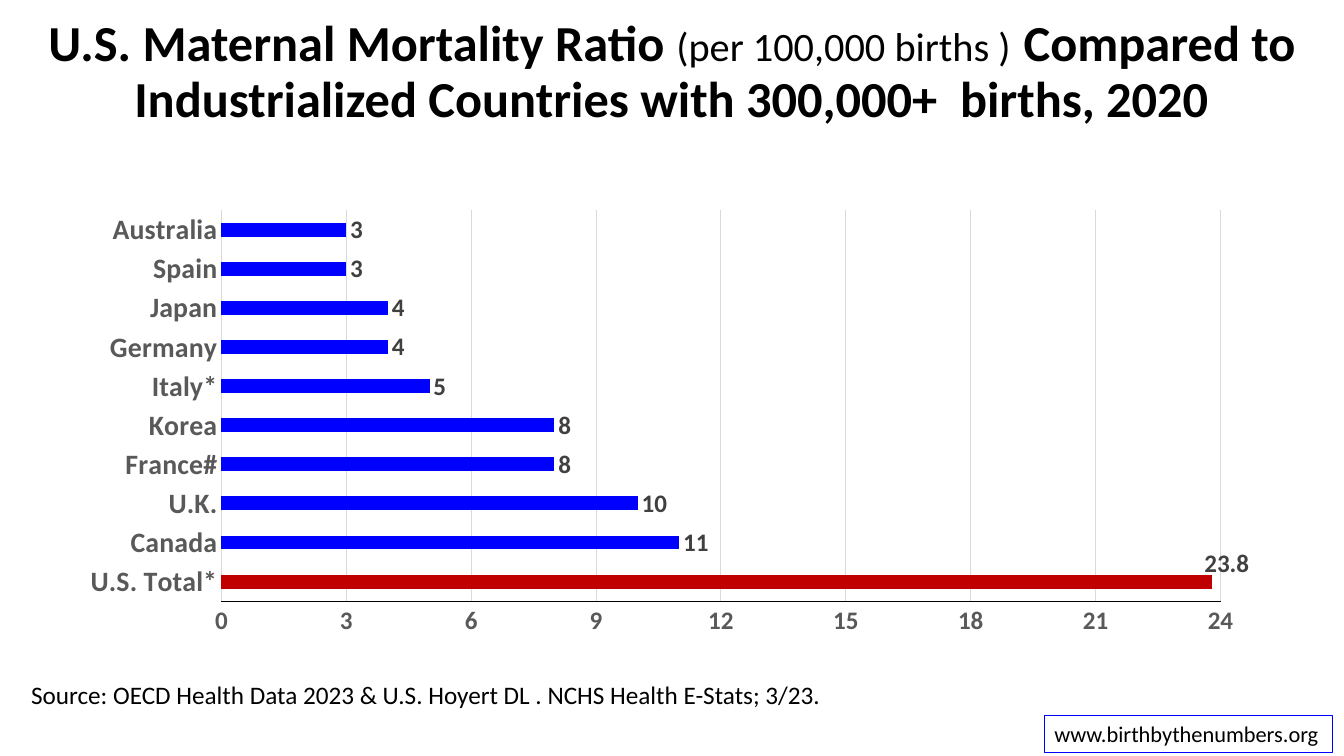
from typing import NamedTuple, Optional

from lxml import etree
from pptx import Presentation
from pptx.chart.data import CategoryChartData
from pptx.dml.color import RGBColor
from pptx.enum import chart as ch, shapes, text
from pptx.util import Inches, Pt

FONT = "Calibri"
BLUE, RED, GRID = "0000FF", "C00000", "D9D9D9"
CHART_NS = "http://schemas.openxmlformats.org/drawingml/2006/chart"


class Run(NamedTuple):
    text: str
    size: float
    bold: bool


class Box(NamedTuple):
    text: str
    left: float
    top: float
    width: float
    height: float
    size: float
    wrap: bool
    fill: Optional[str] = None
    line: Optional[str] = None


TITLE = [
    Run("U.S. Maternal Mortality Ratio ", 36, True),
    Run("(per 100,000 births )", 28.8, False),
    Run(" ", 39.6, True),
    Run("Compared to Industrialized Countries with 300,000+  births, 2020", 36, True),
]
RATIOS = {
    "U.S. Total*": 23.8, "Canada": 11, "U.K.": 10, "France#": 8, "Korea": 8,
    "Italy*": 5, "Germany": 4, "Japan": 4, "Spain": 3, "Australia": 3,
}
BOXES = [
    Box("Source: OECD Health Data 2023 & U.S. Hoyert DL . NCHS Health E-Stats; 3/23.",
        0.21, 6.69, 12.91, 0.4, 18, True),
    Box("www.birthbythenumbers.org", 10.36, 7.1, 2.86, 0.37, 16, False, "FFFFFF", BLUE),
]


def rgb(value: str) -> RGBColor:
    return RGBColor.from_string(value)


def set_font(font, size: float, color: str, bold: bool = False) -> None:
    font.name, font.size, font.bold = FONT, Pt(size), bold
    font.color.rgb = rgb(color)


def set_line(line, color: str) -> None:
    line.color.rgb = rgb(color)
    line.width = Pt(0.75)


def make_layout(**values) -> etree._Element:
    """Build a manual chart layout from its settings, in schema order."""
    layout = etree.Element(f"{{{CHART_NS}}}layout")
    manual = etree.SubElement(layout, f"{{{CHART_NS}}}manualLayout")
    for name, value in values.items():
        etree.SubElement(manual, f"{{{CHART_NS}}}{name}").set("val", str(value))
    return layout


def add_title(s) -> None:
    title = s.shapes.title
    title.left, title.top = Inches(0.21), Inches(0.18)
    title.width, title.height = Inches(12.91), Inches(1.05)
    tf = title.text_frame
    tf.word_wrap = True
    tf.auto_size = text.MSO_AUTO_SIZE.NONE
    tf.vertical_anchor = text.MSO_ANCHOR.MIDDLE
    p = tf.paragraphs[0]
    p.alignment = text.PP_ALIGN.CENTER
    p.line_spacing = 0.9
    for part in TITLE:
        r = p.add_run()
        r.text = part.text
        set_font(r.font, part.size, "000000", part.bold)


def add_box(s, box: Box) -> None:
    place = [Inches(v) for v in box[1:5]]
    if box.fill:
        sp = s.shapes.add_shape(shapes.MSO_SHAPE.RECTANGLE, *place)
        sp.shadow.inherit = False
        sp.fill.solid()
        sp.fill.fore_color.rgb = rgb(box.fill)
        set_line(sp.line, box.line)
    else:
        sp = s.shapes.add_textbox(*place)
    tf = sp.text_frame
    tf.text = box.text
    tf.word_wrap = box.wrap
    tf.auto_size = text.MSO_AUTO_SIZE.SHAPE_TO_FIT_TEXT
    tf.vertical_anchor = text.MSO_ANCHOR.TOP
    p = tf.paragraphs[0]
    p.alignment = text.PP_ALIGN.LEFT
    set_font(p.runs[0].font, box.size, "000000")


def add_ratio_chart(s) -> None:
    data = CategoryChartData()
    data.categories = list(RATIOS)
    data.add_series("Series 1", list(RATIOS.values()))
    chart = s.shapes.add_chart(
        ch.XL_CHART_TYPE.BAR_CLUSTERED,
        Inches(0.67), Inches(1.92), Inches(11.72), Inches(4.47), data).chart
    chart.has_legend = False
    chart.has_title = False
    set_font(chart.font, 10, "000000")

    # Axes
    axes = (chart.category_axis, 20, GRID), (chart.value_axis, 18, "000000")
    for axis, size, line in axes:
        axis.major_tick_mark = axis.minor_tick_mark = ch.XL_TICK_MARK.NONE
        set_font(axis.tick_labels.font, size, "595959", True)
        set_line(axis.format.line, line)
    values = chart.value_axis
    values.minimum_scale, values.maximum_scale, values.major_unit = 0, 24, 3
    values.has_major_gridlines = True
    set_line(values.major_gridlines.format.line, GRID)

    # Bars, with the U.S. in red
    plot = chart.plots[0]
    plot.gap_width = 182
    plot.vary_by_categories = False
    bars = plot.series[0]
    us_total = bars.points[0]
    for target, color in (bars, BLUE), (us_total, RED):
        target.format.fill.solid()
        target.format.fill.fore_color.rgb = rgb(color)

    # Value labels; the U.S. one is raised above its bar
    labels = bars.data_labels
    labels.show_value = True
    for label in labels, us_total.data_label:
        label.position = ch.XL_LABEL_POSITION.OUTSIDE_END
        set_font(label.font, 18, "404040", True)
    us_label = bars._element.xpath(".//c:dLbl")[0]
    us_label.insert(1, make_layout(x=-0.01, y=-0.04))

    # Plot area
    area = chart._chartSpace.xpath(".//c:plotArea")[0]
    for old in area.xpath("./c:layout"):
        area.remove(old)
    area.insert(0, make_layout(layoutTarget="inner", xMode="edge", yMode="edge",
                               x=0.131, y=0.037, w=0.851, h=0.868))


def main() -> None:
    prs = Presentation()
    prs.slide_width, prs.slide_height = Inches(13.33), Inches(7.5)
    s = prs.slides.add_slide(prs.slide_layouts[5])
    add_title(s)
    add_ratio_chart(s)
    for box in BOXES:
        add_box(s, box)
    prs.save("out.pptx")


if __name__ == "__main__":
    main()
